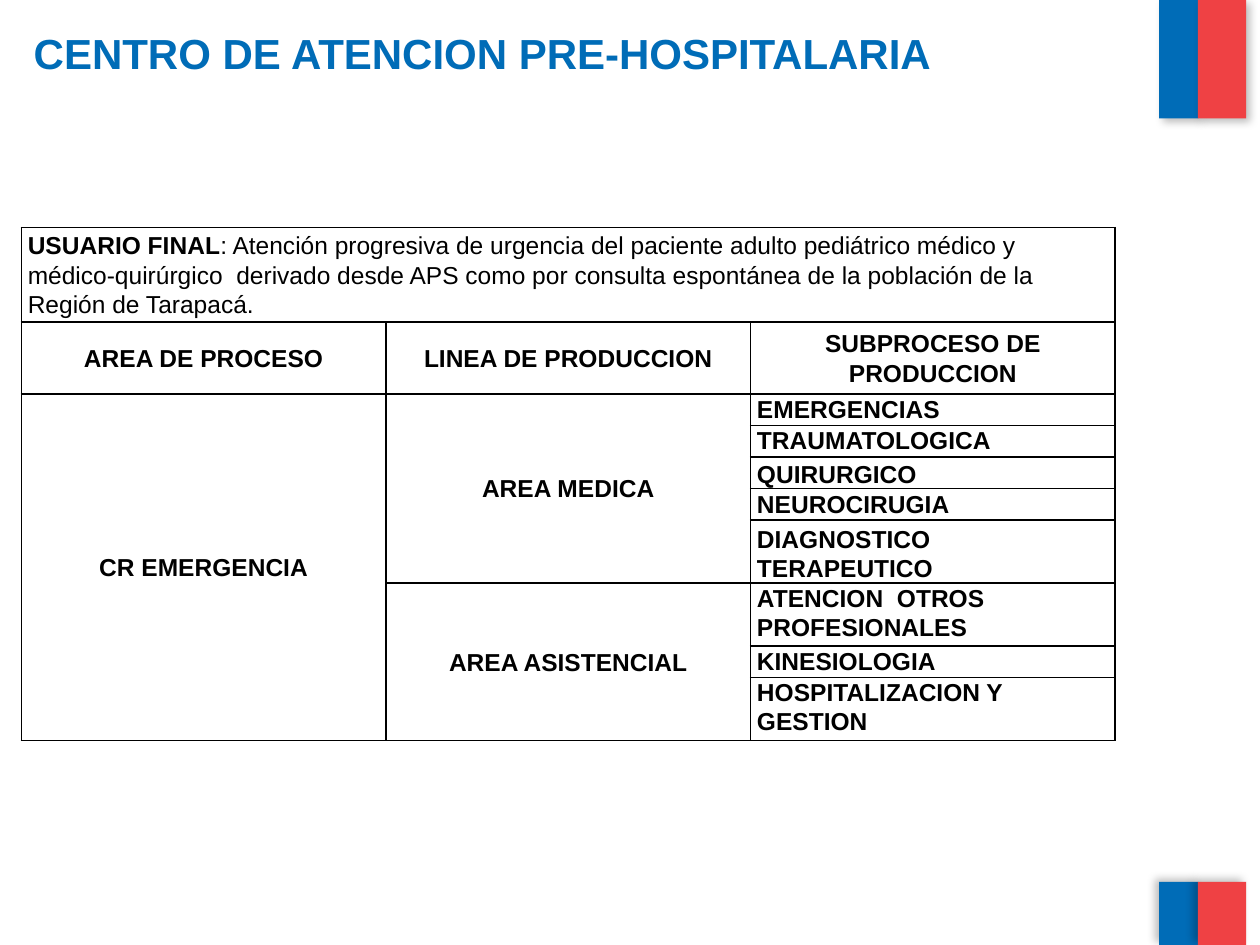
import pptx
import pptx.dml.color
import pptx.enum.shapes
import pptx.enum.text
import pptx.oxml
import pptx.oxml.ns
import pptx.util

Cm = pptx.util.Cm
Pt = pptx.util.Pt
Align = pptx.enum.text.PP_ALIGN
Anchor = pptx.enum.text.MSO_ANCHOR

THEME = {
    "font": "Arial",
    "blue": "006CB7",
    "red": "EF4144",
    "black": "000000",
    "title_size": 24,
    "table_size": 14,
}


def style_span(span, size, color, bold=True):
    span.font.name = THEME["font"]
    span.font.size = Pt(THEME[size])
    span.font.bold = bold
    span.font.color.rgb = pptx.dml.color.RGBColor.from_string(THEME[color])


def append_xml(parent, xml):
    namespace = pptx.oxml.ns.nsdecls("a")
    parent.append(pptx.oxml.parse_xml(xml.replace(" ", f" {namespace} ", 1)))


deck = pptx.Presentation()
deck.slide_width = Cm(25.4)
deck.slide_height = Cm(19.05)
page = deck.slides.add_slide(deck.slide_layouts[6])

bands = [
    (23.37, 0, 0.79, 2.39, "blue", 45),
    (24.15, 0, 0.97, 2.39, "red", 45),
    (23.37, 17.78, 0.79, 1.27, "blue", 215),
    (24.15, 17.78, 0.97, 1.27, "red", 215),
]
for left, top, width, height, color, angle in bands:
    band = page.shapes.add_shape(
        pptx.enum.shapes.MSO_SHAPE.RECTANGLE, Cm(left), Cm(top), Cm(width), Cm(height)
    )
    band.fill.solid()
    band.fill.fore_color.rgb = pptx.dml.color.RGBColor.from_string(THEME[color])
    band.line.fill.background()
    band.shadow.inherit = False
    effects = band._element.spPr.find(pptx.oxml.ns.qn("a:effectLst"))
    append_xml(
        effects,
        f'<a:outerShdw blurRad="{Pt(5)}" dist="{Pt(3)}" dir="{angle * 60000}" rotWithShape="0">'
        f'<a:srgbClr val="{THEME["black"]}"><a:alpha val="25000"/></a:srgbClr></a:outerShdw>',
    )

title_box = page.shapes.add_textbox(Cm(0.43), Cm(0.43), Cm(22.68), Cm(3.18))
title_box.text_frame.word_wrap = True
title_box.text_frame.text = "CENTRO DE ATENCION PRE-HOSPITALARIA"
style_span(title_box.text_frame.paragraphs[0].runs[0], "title_size", "blue")

row_heights = [1.78, 1.45] + [0.59] * 4 + [1.18, 1.18, 0.59, 1.18]
table_frame = page.shapes.add_table(
    len(row_heights), 3, Cm(0.43), Cm(4.59), Cm(22.05), Cm(sum(row_heights))
)
table = table_frame.table
for column in table.columns:
    column.width = Cm(7.35)
for row, height in zip(table.rows, row_heights):
    row.height = Cm(height)

for first, last in [((0, 0), (0, 2)), ((2, 0), (9, 0)), ((2, 1), (6, 1)), ((7, 1), (9, 1))]:
    table.cell(*first).merge(table.cell(*last))

for cell in table.iter_cells():
    cell.margin_left = cell.margin_right = Cm(0.13)
    cell.margin_top = cell.margin_bottom = 0
    cell.vertical_anchor = Anchor.MIDDLE
    for side in ("lnL", "lnR", "lnT", "lnB"):
        append_xml(
            cell._tc.get_or_add_tcPr(),
            f'<a:{side} w="{Pt(1)}"><a:solidFill><a:srgbClr val="{THEME["black"]}"/>'
            f"</a:solidFill></a:{side}>",
        )
    cell.fill.background()

user_label = "USUARIO FINAL"
user_text = (
    ": Atención progresiva de urgencia del paciente adulto pediátrico médico y "
    "médico-quirúrgico  derivado desde APS como por consulta espontánea de la "
    "población de la Región de Tarapacá."
)
para = table.cell(0, 0).text_frame.paragraphs[0]
para.line_spacing = 1.07
for text, bold in [(user_label, True), (user_text, False)]:
    span = para.add_run()
    span.text = text
    style_span(span, "table_size", "black", bold)

entries = [
    (1, 0, "AREA DE PROCESO"),
    (1, 1, "LINEA DE PRODUCCION"),
    (1, 2, "SUBPROCESO DE PRODUCCION"),
    (2, 0, "CR EMERGENCIA"),
    (2, 1, "AREA MEDICA"),
    (7, 1, "AREA ASISTENCIAL"),
]
subprocesses = [
    ("EMERGENCIAS", Anchor.TOP),
    ("TRAUMATOLOGICA", Anchor.TOP),
    ("QUIRURGICO", Anchor.BOTTOM),
    ("NEUROCIRUGIA", Anchor.MIDDLE),
    ("DIAGNOSTICO TERAPEUTICO", Anchor.BOTTOM),
    ("ATENCION  OTROS PROFESIONALES", Anchor.TOP),
    ("KINESIOLOGIA", Anchor.TOP),
    ("HOSPITALIZACION Y GESTION", Anchor.TOP),
]
for row_index, (text, anchor) in enumerate(subprocesses, start=2):
    table.cell(row_index, 2).vertical_anchor = anchor
    entries.append((row_index, 2, text))

for row_index, column_index, text in entries:
    cell = table.cell(row_index, column_index)
    cell.text_frame.text = text
    para = cell.text_frame.paragraphs[0]
    para.line_spacing = 1.07
    is_subprocess = row_index > 1 and column_index == 2
    para.alignment = Align.LEFT if is_subprocess else Align.CENTER
    style_span(para.runs[0], "table_size", "black")

deck.save("out.pptx")
